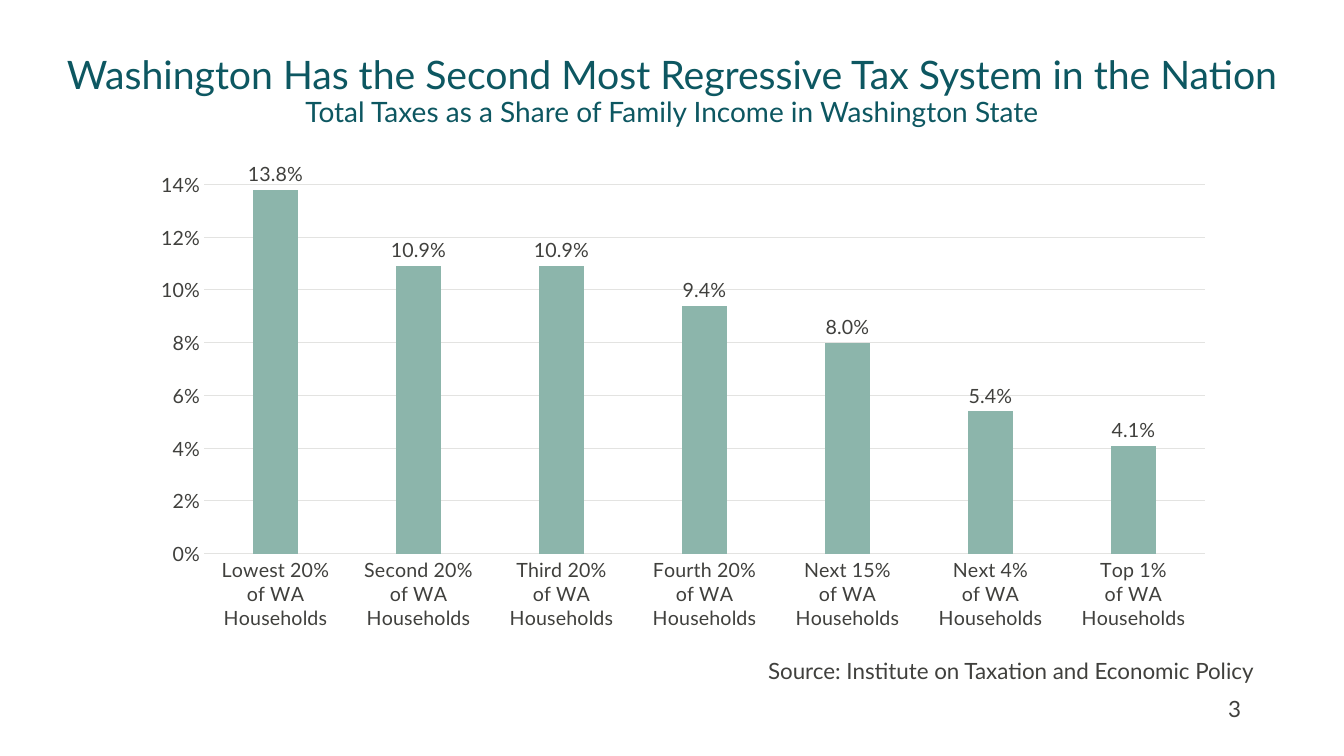
from dataclasses import dataclass

from lxml import etree
from pptx import Presentation
from pptx import util as u
from pptx.chart.data import CategoryChartData
from pptx.dml.color import RGBColor
from pptx.enum import chart as ch, text as tx
from pptx.oxml import parse_xml
from pptx.oxml.ns import nsdecls, qn

SCALE = 914400 / 100.8


@dataclass
class Theme:
    face: str = "Lato"
    base: str = "Calibri"
    teal: str = "0D5761"
    ink: str = "40403D"
    bar: str = "8CB5AB"
    grid: str = "E3E3E1"
    head: int = 28
    sub: int = 20
    body: int = 16
    label: int = 14
    small: int = 10


def px(*nums):
    return [round(n * SCALE) for n in nums]


def style(font, face, size, color):
    font.name = face
    font.size = u.Pt(size)
    font.bold = False
    font.color.rgb = RGBColor.from_string(color)


def write(para, words, face, size, color, align=None, space=None):
    para.alignment = align
    para.line_spacing = space
    run = para.add_run()
    run.text = words
    style(run.font, face, size, color)


class Deck:
    def __init__(self, theme):
        self.theme = theme
        self.show = Presentation()
        self.show.slide_width, self.show.slide_height = px(1344, 756)
        self.slide = self.show.slides.add_slide(self.show.slide_layouts[5])

    def title(self, box, lines):
        shape = self.slide.shapes.title
        shape.left, shape.top, shape.width, shape.height = px(*box)
        frame = shape.text_frame
        frame.word_wrap = True
        frame.auto_size = tx.MSO_AUTO_SIZE.NONE
        frame.vertical_anchor = tx.MSO_ANCHOR.MIDDLE
        for i, (words, size) in enumerate(lines):
            para = frame.add_paragraph() if i else frame.paragraphs[0]
            write(para, words, self.theme.face, size, self.theme.teal,
                  align=tx.PP_ALIGN.CENTER, space=0.9)

    def note(self, box, words, anchor=tx.MSO_ANCHOR.TOP, align=tx.PP_ALIGN.LEFT):
        frame = self.slide.shapes.add_textbox(*px(*box)).text_frame
        frame.word_wrap = True
        frame.vertical_anchor = anchor
        write(frame.paragraphs[0], words, self.theme.face, self.theme.body,
              self.theme.ink, align=align)

    def line(self, form):
        form.line.color.rgb = RGBColor.from_string(self.theme.grid)
        form.line.width = u.Pt(0.75)

    def columns(self, box, shares, plot):
        t = self.theme
        data = CategoryChartData(number_format="0.0%")
        data.categories = [f"{group}\nof WA Households" for group in shares]
        data.add_series("Series 1", list(shares.values()))
        chart = self.slide.shapes.add_chart(
            ch.XL_CHART_TYPE.COLUMN_CLUSTERED, *px(*box), data).chart
        chart.has_title = False
        chart.has_legend = False
        style(chart.font, t.base, t.small, t.ink)

        cat, val = chart.category_axis, chart.value_axis
        for axis in (cat, val):
            axis.major_tick_mark = ch.XL_TICK_MARK.NONE
            axis.minor_tick_mark = ch.XL_TICK_MARK.NONE
            style(axis.tick_labels.font, t.face, t.label, t.ink)
        self.line(cat.format)
        val.format.line.fill.background()
        val.minimum_scale, val.maximum_scale, val.major_unit = 0, 0.15, 0.02
        val.tick_labels.number_format = "0%"
        val.tick_labels.number_format_is_linked = False
        val.has_major_gridlines = True
        self.line(val.major_gridlines.format)

        bars = chart.plots[0]
        bars.gap_width, bars.overlap = 219, -27
        bars.vary_by_categories = False
        fill = bars.series[0].format.fill
        fill.solid()
        fill.fore_color.rgb = RGBColor.from_string(t.bar)
        labels = bars.series[0].data_labels
        labels.show_value = True
        labels.position = ch.XL_LABEL_POSITION.OUTSIDE_END
        labels.number_format = "0.0%"
        labels.number_format_is_linked = False
        style(labels.font, t.face, t.label, t.ink)
        self.place(chart, plot)

    def place(self, chart, plot):
        area = chart._chartSpace.find(".//" + qn("c:plotArea"))
        for old in area.findall(qn("c:layout")):
            area.remove(old)
        layout = parse_xml(f"<c:layout {nsdecls('c')}><c:manualLayout/></c:layout>")
        rules = [("layoutTarget", "inner"), ("xMode", "edge"), ("yMode", "edge")]
        for tag, value in rules + list(zip("xywh", plot)):
            etree.SubElement(layout[0], qn(f"c:{tag}"), val=str(value))
        area.insert(0, layout)


def main():
    theme = Theme()
    deck = Deck(theme)
    deck.note((1180, 689, 71, 40), "3", tx.MSO_ANCHOR.MIDDLE, tx.PP_ALIGN.RIGHT)
    deck.note((556, 652, 708, 37),
              "Source: Institute on Taxation and Economic Policy",
              align=tx.PP_ALIGN.RIGHT)
    deck.title((25, 52, 1294, 80), [
        ("Washington Has the Second Most Regressive Tax System in the Nation",
         theme.head),
        ("Total Taxes as a Share of Family Income in Washington State", theme.sub),
    ])
    shares = {
        "Lowest 20%": 0.138,
        "Second 20%": 0.109,
        "Third 20%": 0.109,
        "Fourth 20%": 0.094,
        "Next 15%": 0.08,
        "Next 4%": 0.054,
        "Top 1%": 0.041,
    }
    deck.columns((128, 143, 1088, 501), shares, (0.07, 0.03, 0.92, 0.79))
    deck.show.save("out.pptx")


if __name__ == "__main__":
    main()
